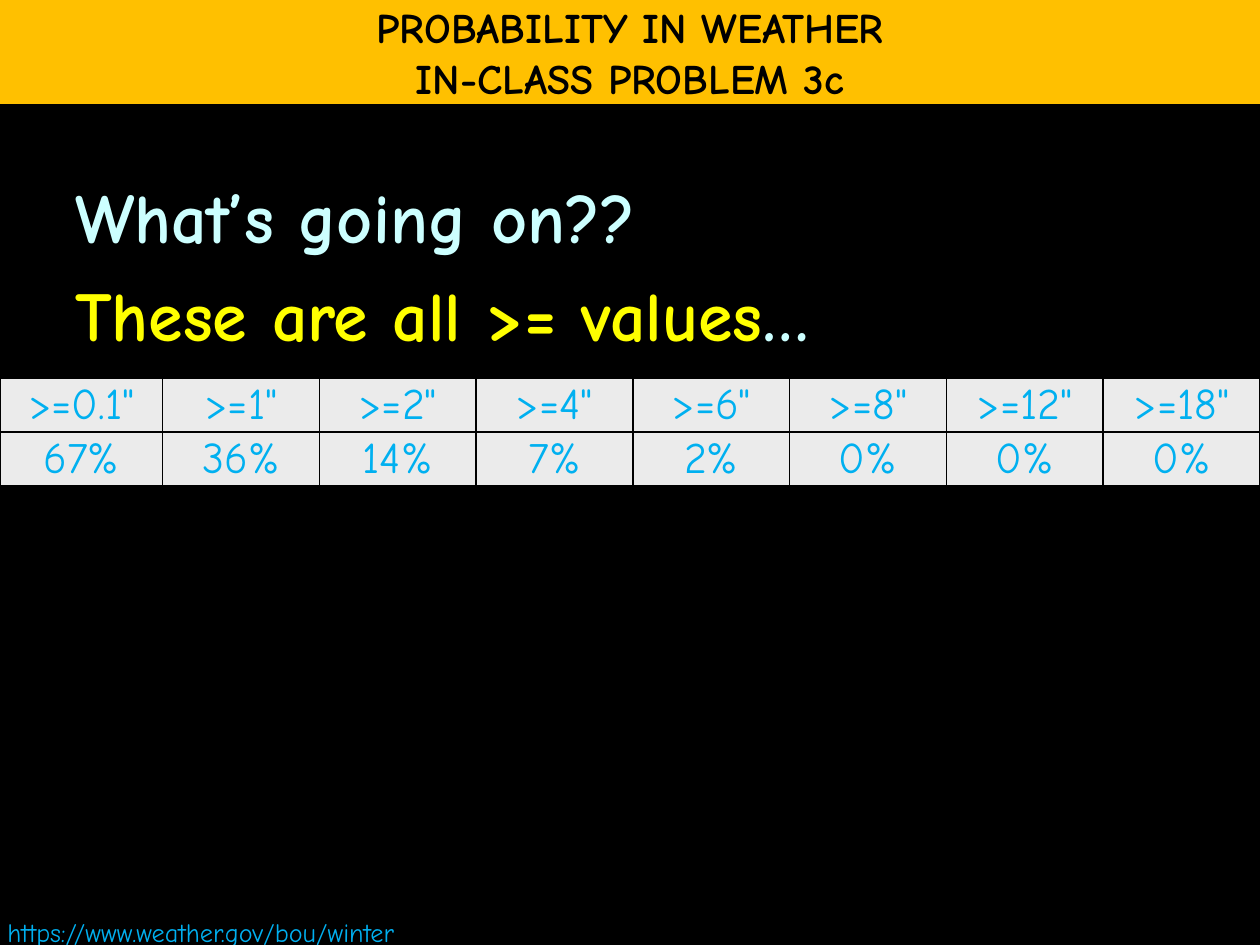
import dataclasses

import pptx
import pptx.dml.color
import pptx.enum.text
import pptx.oxml
import pptx.oxml.ns
import pptx.util

ALIGN = pptx.enum.text.PP_ALIGN
MIDDLE = pptx.enum.text.MSO_ANCHOR.MIDDLE
WIDTH = pptx.util.Inches(10)
HEIGHT = pptx.util.Inches(7.5)


@dataclasses.dataclass(frozen=True)
class Theme:
    """Colours, font and type sizes of the slide."""

    font: str = "Comic Neue"
    black: str = "000000"
    banner: str = "FFC000"
    question: str = "CCFFFF"
    answer: str = "FFFF00"
    data: str = "00B0F0"
    cell: str = "EBEBEB"
    title_size: int = 24
    body_size: int = 40
    table_size: int = 25
    link_size: int = 15


THEME = Theme()


def rgb(value):
    """Return a colour object for a hex string."""
    return pptx.dml.color.RGBColor.from_string(value)


def place(s, left, top, width, height):
    """Place a shape by shares of the slide's width and height."""
    box = {"left": left * WIDTH, "top": top * HEIGHT,
           "width": width * WIDTH, "height": height * HEIGHT}
    for name, value in box.items():
        setattr(s, name, round(value))


def paint(fill, color):
    """Give a fill one solid colour."""
    fill.solid()
    fill.fore_color.rgb = rgb(color)


def write(tf, lines, size, bold=False, **paragraph_format):
    """Write lines, each a list of (text, colour) runs, into a text frame."""
    for i, runs in enumerate(lines):
        p = tf.add_paragraph() if i else tf.paragraphs[0]
        for name, value in paragraph_format.items():
            setattr(p, name, value)
        for text, color in runs:
            r = p.add_run()
            r.text = text
            look = {"name": THEME.font, "size": pptx.util.Pt(size), "bold": bold}
            for name, value in look.items():
                setattr(r.font, name, value)
            r.font.color.rgb = rgb(color)


def add_banner(slide, lines):
    """Turn the title placeholder into a full-width banner."""
    s = slide.shapes.title
    place(s, 0, 0, 1, 0.11)
    paint(s.fill, THEME.banner)
    tf = s.text_frame
    look = {"word_wrap": False, "vertical_anchor": MIDDLE,
            "auto_size": pptx.enum.text.MSO_AUTO_SIZE.NONE}
    for name, value in look.items():
        setattr(tf, name, value)
    write(tf, [[(line, THEME.black)] for line in lines], THEME.title_size,
          bold=True, alignment=ALIGN.CENTER)


def add_text(slide, box, lines, size, **look):
    """Add a wrapping text box."""
    s = slide.shapes.add_textbox(0, 0, 0, 0)
    place(s, *box)
    s.text_frame.word_wrap = True
    write(s.text_frame, lines, size, **look)


def add_borders(cell):
    """Draw a thin black line on each side of a cell."""
    props = cell._tc.get_or_add_tcPr()
    for i, side in enumerate(("lnL", "lnR", "lnT", "lnB")):
        props.insert(i, pptx.oxml.parse_xml(
            f'<a:{side} {pptx.oxml.ns.nsdecls("a")} w="12700"><a:solidFill>'
            f'<a:srgbClr val="{THEME.black}"/></a:solidFill></a:{side}>'))


def add_table(slide, rows, top, height, first_share):
    """Add a full-width table with a slightly wider first column."""
    count = len(rows[0])
    s = slide.shapes.add_table(len(rows), count, 0, 0, WIDTH, 0)
    place(s, 0, top, 1, height)
    table = s.table
    for row in table.rows:
        row.height = round(height * HEIGHT / len(rows))
    for i, column in enumerate(table.columns):
        share = (1 - first_share) / (count - 1) if i else first_share
        column.width = round(share * WIDTH)
    inset = pptx.util.Inches(0.01)
    look = {"vertical_anchor": MIDDLE, "margin_left": inset,
            "margin_right": inset, "margin_top": inset, "margin_bottom": 0}
    for row, values in zip(table.rows, rows):
        for cell, value in zip(row.cells, values):
            for name, setting in look.items():
                setattr(cell, name, setting)
            paint(cell.fill, THEME.cell)
            add_borders(cell)
            write(cell.text_frame, [[(value, THEME.data)]], THEME.table_size,
                  alignment=ALIGN.CENTER)


def main():
    """Build and save the slide."""
    prs = pptx.Presentation()
    prs.slide_width, prs.slide_height = WIDTH, HEIGHT
    slide = prs.slides.add_slide(prs.slide_layouts.get_by_name("Title Only"))
    paint(slide.background.fill, THEME.black)
    add_banner(slide, ["PROBABILITY IN WEATHER", "IN-CLASS PROBLEM 3c"])
    add_text(slide, (0.05, 0.177, 0.9, 0.823),
             [[("What’s going on??", THEME.question)],
              [("These are all >= values", THEME.answer), ("…", THEME.question)]],
             THEME.body_size, bold=True,
             space_before=pptx.util.Pt(0.2 * THEME.body_size))
    add_text(slide, (-0.004, 0.963, 0.5, 0.047),
             [[("https://www.weather.gov/bou/winter", THEME.data)]],
             THEME.link_size)
    depths = ("0.1", "1", "2", "4", "6", "8", "12", "18")
    chances = (67, 36, 14, 7, 2, 0, 0, 0)
    add_table(slide, [[f'>={depth}"' for depth in depths],
                      [f"{chance}%" for chance in chances]],
              top=0.4, height=0.113, first_share=0.129)
    prs.save("out.pptx")


if __name__ == "__main__":
    main()
